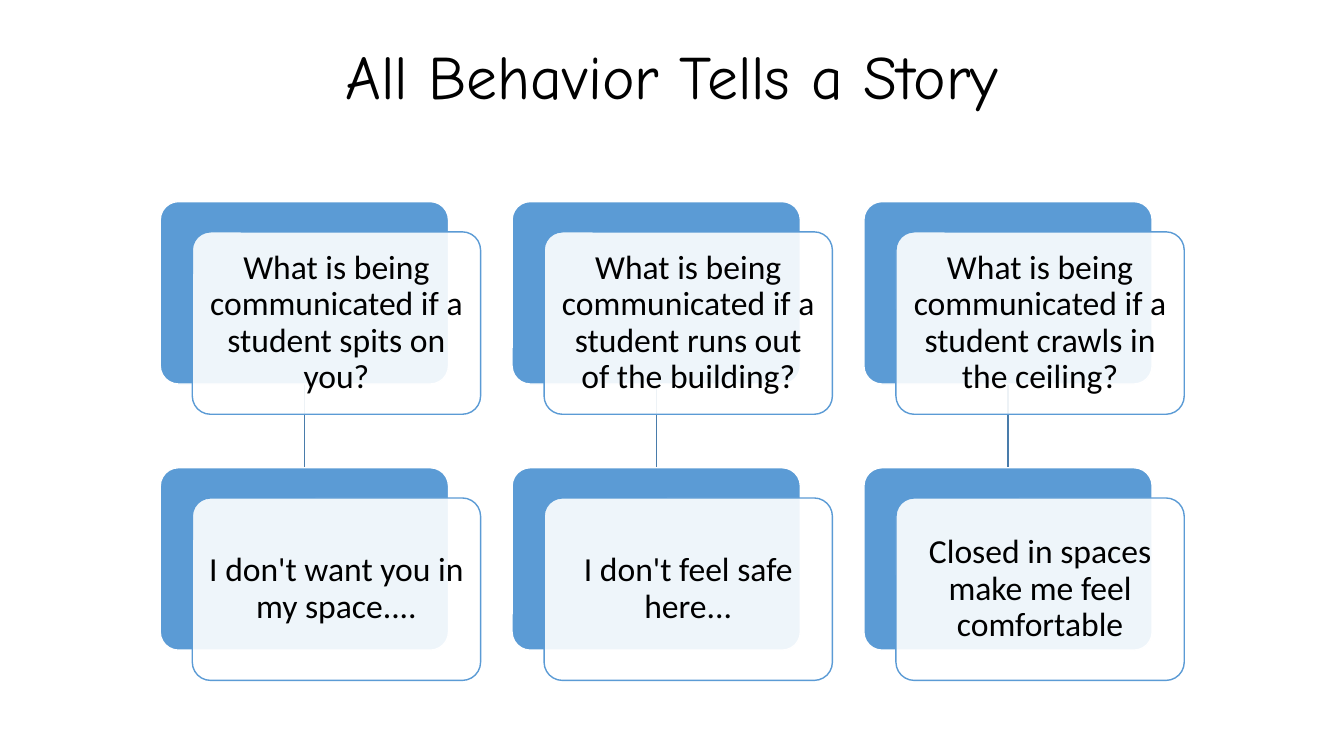
from lxml.etree import SubElement
from pptx import Presentation
from pptx.dml.color import RGBColor
from pptx.enum.shapes import MSO_CONNECTOR, MSO_SHAPE
from pptx.enum.text import MSO_ANCHOR, PP_ALIGN
from pptx.oxml.ns import qn
from pptx.util import Pt

COLORS = {"blue": "5B9BD5", "connector": "497CAB", "white": "FFFFFF", "black": "000000"}

STORIES = [
    ("What is being communicated if a student spits on you?",
     "I don't want you in my space...."),
    ("What is being communicated if a student runs out of the building?",
     "I don't feel safe here..."),
    ("What is being communicated if a student crawls in the ceiling?",
     "Closed in spaces make me feel comfortable"),
]

LEFT, TOP = 114.5, 144
COLUMN_STEP, ROW_STEP = 251.3, 190.1
CARD_WIDTH, CARD_HEIGHT = 205.9, 130.3
FRONT_SHIFT_X, FRONT_SHIFT_Y = 22.9, 21.6


def write_text(shape, text, *, size, font, color="black", margin=7.2):
    frame = shape.text_frame
    frame.word_wrap = True
    frame.vertical_anchor = MSO_ANCHOR.MIDDLE
    frame.margin_left = frame.margin_right = Pt(margin)
    frame.margin_top = frame.margin_bottom = Pt(margin)
    paragraph = frame.paragraphs[0]
    paragraph.alignment = PP_ALIGN.CENTER
    paragraph.line_spacing = 0.9
    run = paragraph.add_run()
    run.text = text
    run.font.size = Pt(size)
    run.font.name = font
    run.font.color.rgb = RGBColor.from_string(COLORS[color])


def add_card(x, y, fill, line):
    card = slide.shapes.add_shape(
        MSO_SHAPE.ROUNDED_RECTANGLE, Pt(x), Pt(y), Pt(CARD_WIDTH), Pt(CARD_HEIGHT))
    card.adjustments[0] = 0.1
    card.shadow.inherit = False
    card.fill.solid()
    card.fill.fore_color.rgb = RGBColor.from_string(COLORS[fill])
    card.line.color.rgb = RGBColor.from_string(COLORS[line])
    card.line.width = Pt(1)
    return card


presentation = Presentation()
presentation.slide_width, presentation.slide_height = Pt(960), Pt(540)
slide = presentation.slides.add_slide(presentation.slide_layouts[6])

title = slide.shapes.add_textbox(Pt(66), Pt(13), Pt(828), Pt(87))
write_text(title, "All Behavior Tells a Story", size=44, font="Comic Neue", margin=3.6)

for column in range(len(STORIES)):
    x = LEFT + column * COLUMN_STEP + CARD_WIDTH / 2
    connector = slide.shapes.add_connector(
        MSO_CONNECTOR.STRAIGHT, Pt(x), Pt(TOP + CARD_HEIGHT), Pt(x), Pt(TOP + ROW_STEP))
    connector.line.color.rgb = RGBColor.from_string(COLORS["connector"])
    connector.line.width = Pt(1)
    SubElement(connector.element.spPr, qn("a:effectLst"))

for column, story in enumerate(STORIES):
    for row, text in enumerate(story):
        x = LEFT + column * COLUMN_STEP
        y = TOP + row * ROW_STEP
        add_card(x, y, "blue", "white")
        front = add_card(x + FRONT_SHIFT_X, y + FRONT_SHIFT_Y, "white", "blue")
        fill_color = front.element.spPr.find(qn("a:solidFill")).find(qn("a:srgbClr"))
        SubElement(fill_color, qn("a:alpha"), val="90000")
        write_text(front, text, size=24, font="Calibri")

presentation.save("out.pptx")
